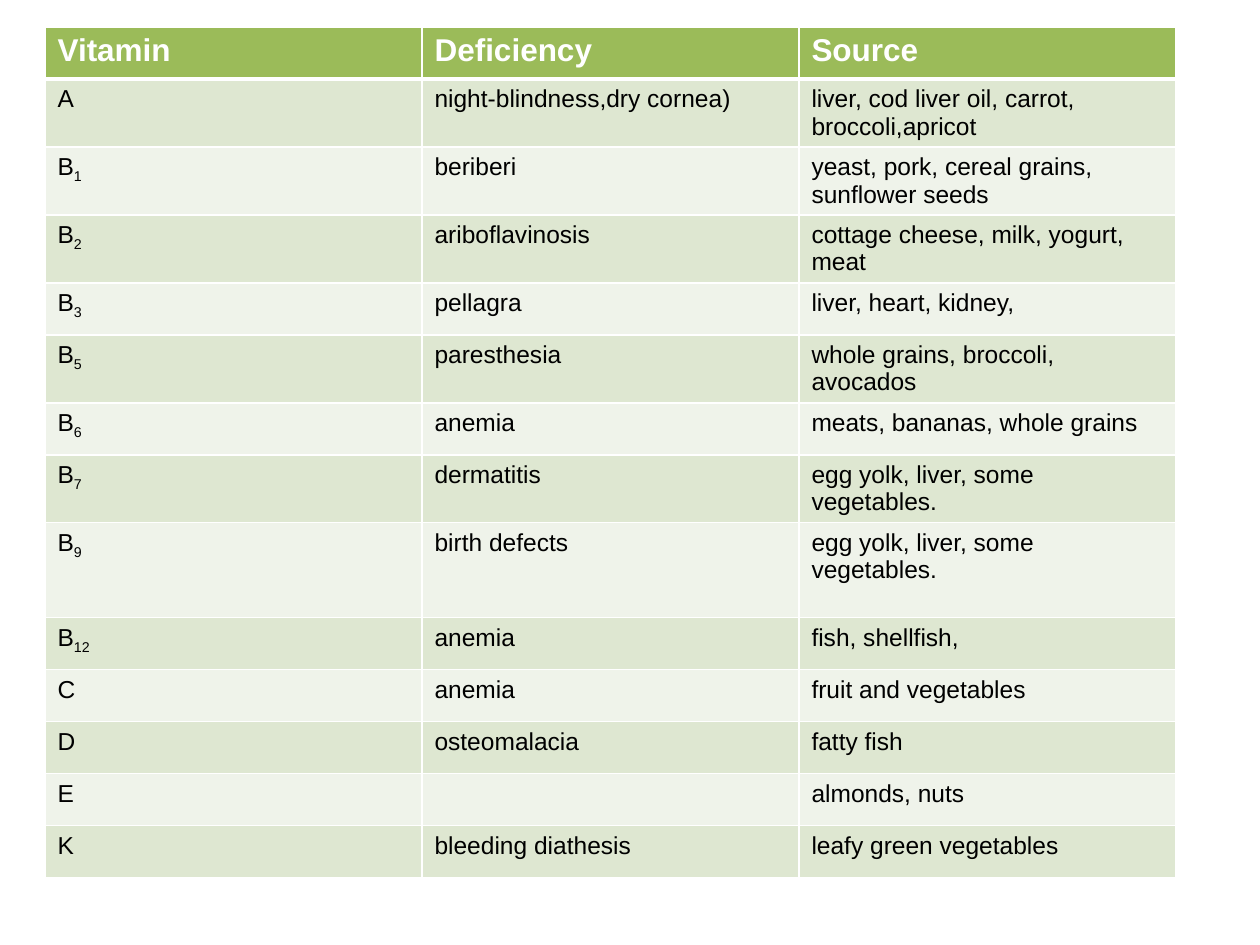
from lxml import etree
from pptx import Presentation
from pptx import util as u
from pptx.dml.color import RGBColor
from pptx.oxml import ns

PX = 914400 // 126
HEAD = ("Vitamin", "Deficiency", "Source")
ROWS = [
    ("A", "", "night-blindness,dry cornea)", "liver, cod liver oil, carrot, broccoli,apricot", 68),
    ("B", "1", "beriberi", "yeast, pork, cereal grains, sunflower seeds", 68),
    ("B", "2", "ariboflavinosis", "cottage cheese, milk, yogurt, meat", 68),
    ("B", "3", "pellagra", "liver, heart, kidney,", 52),
    ("B", "5", "paresthesia", "whole grains, broccoli, avocados", 68),
    ("B", "6", "anemia", "meats, bananas, whole grains", 52),
    ("B", "7", "dermatitis", "egg yolk, liver, some vegetables.", 68),
    ("B", "9", "birth defects", "egg yolk, liver, some vegetables.", 95),
    ("B", "12", "anemia", "fish, shellfish,", 52),
    ("C", "", "anemia", "fruit and vegetables", 52),
    ("D", "", "osteomalacia", "fatty fish", 52),
    ("E", "", "", "almonds, nuts", 52),
    ("K", "", "bleeding diathesis", "leafy green vegetables", 52),
]


def paint(fill, tint):
    """Give a fill one solid hex colour."""
    fill.solid()
    fill.fore_color.rgb = RGBColor.from_string(tint)


def edge(cell, side, width):
    """Draw one white border of a cell, with its width in points."""
    props = cell._tc.get_or_add_tcPr()
    line = etree.SubElement(props, ns.qn("a:ln" + side), w=str(u.Pt(width)))
    solid = etree.SubElement(line, ns.qn("a:solidFill"))
    etree.SubElement(solid, ns.qn("a:srgbClr"), val="FFFFFF")


def write(cell, words, sub, size, ink, bold):
    """Write a cell's words and an optional subscript."""
    para = cell.text_frame.paragraphs[0]
    font = para.font
    font.name, font.size, font.bold = "Arial", u.Pt(size), bold
    paint(font.fill, ink)
    if words:
        para.add_run().text = words
    if sub:
        run = para.add_run()
        run.text = sub
        run.font._element.set("baseline", "-25000")


def vitamins(slide, left, top, width):
    """Place the vitamin table with a header and banded rows."""
    lines = [[(word, "") for word in HEAD]]
    lines += [[(name, sub), (lack, ""), (food, "")] for name, sub, lack, food, _ in ROWS]
    highs = [52] + [row[-1] for row in ROWS]
    frame = slide.shapes.add_table(len(lines), len(HEAD), left * PX, top * PX,
                                   width * PX, sum(highs) * PX)
    table = frame.table
    for r, (line, high) in enumerate(zip(lines, highs)):
        table.rows[r].height = high * PX
        head = r == 0
        tint = "9BBB59" if head else ("EFF3EA", "DEE7D1")[r % 2]
        style = (18, "FFFFFF", True) if head else (14, "000000", False)
        for c, (words, sub) in enumerate(line):
            cell = table.cell(r, c)
            write(cell, words, sub, *style)
            for side in "LRTB":
                thick = (r, side) in ((0, "B"), (1, "T"))
                edge(cell, side, 3 if thick else 1)
            paint(cell.fill, tint)


def main():
    """Build and save the slide."""
    deck = Presentation()
    deck.slide_width, deck.slide_height = u.Inches(10), u.Inches(7.5)
    slide = deck.slides.add_slide(deck.slide_layouts[6])
    vitamins(slide, 45, 27, 1131)
    deck.save("out.pptx")


if __name__ == "__main__":
    main()
